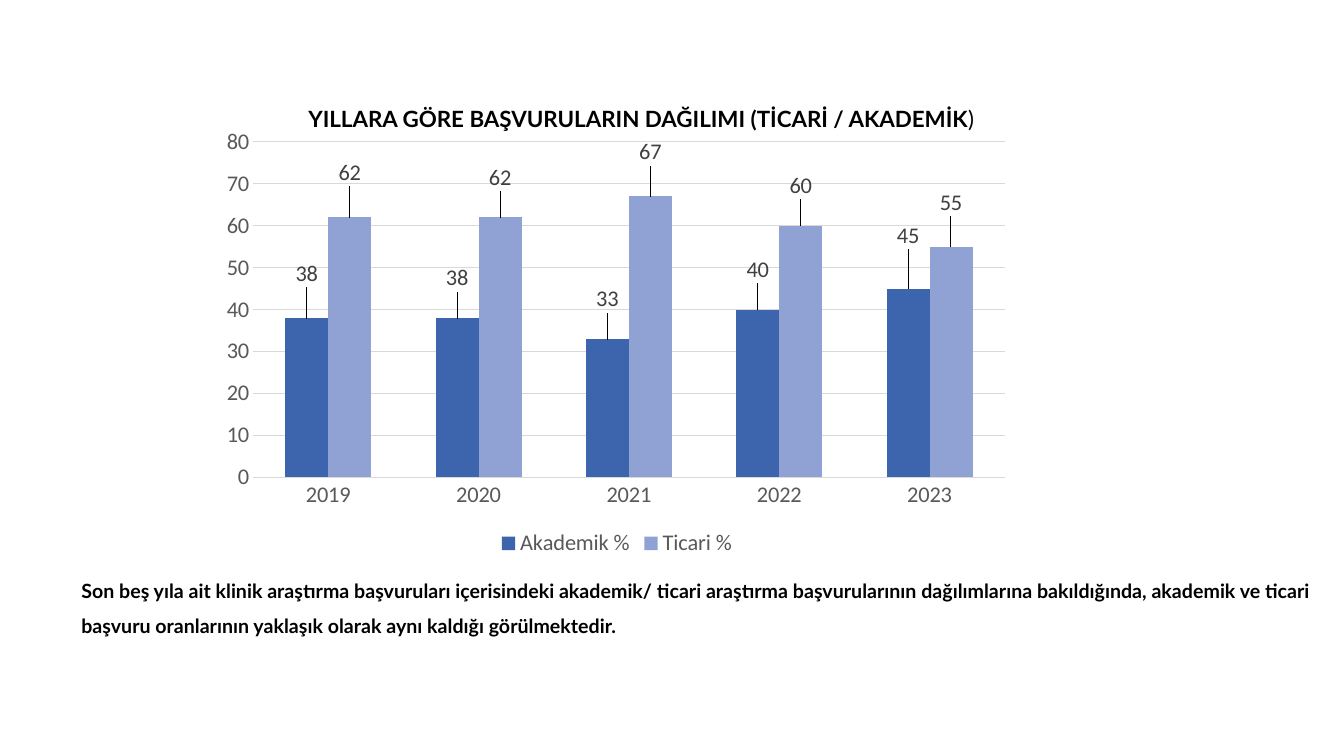
from dataclasses import dataclass

from lxml.etree import SubElement
from pptx import Presentation
from pptx.chart.data import CategoryChartData
from pptx.dml.color import RGBColor
from pptx.enum.chart import XL_CHART_TYPE, XL_LABEL_POSITION, XL_LEGEND_POSITION, XL_TICK_MARK
from pptx.enum.text import MSO_ANCHOR, MSO_AUTO_SIZE, PP_ALIGN
from pptx.oxml import parse_xml
from pptx.util import Cm, Pt

BLACK = RGBColor(0x00, 0x00, 0x00)
AXIS_GRAY = RGBColor(0x59, 0x59, 0x59)
LABEL_GRAY = RGBColor(0x40, 0x40, 0x40)
GRID_GRAY = RGBColor(0xD9, 0xD9, 0xD9)
DARK_BLUE = RGBColor(0x3C, 0x65, 0xAE)
LIGHT_BLUE = RGBColor(0x90, 0xA2, 0xD3)

CHART_NAMESPACE = "http://schemas.openxmlformats.org/drawingml/2006/chart"
YEARS = ["2019", "2020", "2021", "2022", "2023"]


@dataclass
class Share:
    name: str
    values: list[int]
    label_shifts: list[float]
    color: RGBColor


@dataclass
class TextRun:
    text: str
    bold: bool = True


SHARES = [
    Share("Akademik %", [38, 38, 33, 40, 45], [-0.06, -0.05, -0.05, -0.05, -0.08], DARK_BLUE),
    Share("Ticari %", [62, 62, 67, 60, 55], [-0.06, -0.05, -0.06, -0.05, -0.06], LIGHT_BLUE),
]
TITLE_RUNS = [
    TextRun("YILLARA GÖRE BAŞVURULARIN DAĞILIMI (TİCARİ / AKADEMİK"),
    TextRun(")", bold=False),
]
NOTE_RUNS = [
    TextRun(
        "Son beş yıla ait klinik araştırma başvuruları içerisindeki akademik/ ticari "
        "araştırma başvurularının dağılımlarına bakıldığında, akademik ve ticari "
        "başvuru oranlarının yaklaşık olarak aynı kaldığı görülmektedir."
    )
]


def write_text(shape, runs: list[TextRun], size: int) -> None:
    frame = shape.text_frame
    frame.word_wrap = True
    frame.auto_size = MSO_AUTO_SIZE.NONE
    frame.vertical_anchor = MSO_ANCHOR.TOP
    frame.margin_left = Cm(1.52)
    paragraph = frame.paragraphs[0]
    paragraph.alignment = PP_ALIGN.LEFT
    paragraph.line_spacing = 1.5
    for item in runs:
        run = paragraph.add_run()
        run.text = item.text
        run.font.name = "Lato"
        run.font.size = Pt(size)
        run.font.bold = item.bold
        run.font.color.rgb = BLACK


def style_font(font, color: RGBColor) -> None:
    font.name = "Calibri"
    font.size = Pt(16)
    font.bold = False
    font.color.rgb = color


def make_layout(**settings: str | float):
    layout = parse_xml(f'<c:layout xmlns:c="{CHART_NAMESPACE}"/>')
    manual = SubElement(layout, f"{{{CHART_NAMESPACE}}}manualLayout")
    for name, value in settings.items():
        SubElement(manual, f"{{{CHART_NAMESPACE}}}{name}", val=str(value))
    return layout


def style_axis(axis) -> None:
    axis.major_tick_mark = XL_TICK_MARK.NONE
    axis.minor_tick_mark = XL_TICK_MARK.NONE
    axis.format.line.fill.background()
    style_font(axis.tick_labels.font, AXIS_GRAY)


def style_series(series, share: Share) -> None:
    series.format.fill.solid()
    series.format.fill.fore_color.rgb = share.color
    for index, shift in enumerate(share.label_shifts):
        label = series.points[index].data_label
        style_font(label.font, LABEL_GRAY)
        label.position = XL_LABEL_POSITION.OUTSIDE_END
        label._get_or_add_dLbl().insert(1, make_layout(x=0, y=shift))
    labels = series.data_labels
    labels.show_value = True
    labels.position = XL_LABEL_POSITION.OUTSIDE_END
    style_font(labels.font, LABEL_GRAY)


def add_share_chart(slide) -> None:
    data = CategoryChartData(number_format="0")
    data.categories = YEARS
    for share in SHARES:
        data.add_series(share.name, share.values)
    chart = slide.shapes.add_chart(
        XL_CHART_TYPE.COLUMN_CLUSTERED, Cm(5.36), Cm(3.02), Cm(20.37), Cm(11.13), data
    ).chart
    style_font(chart.font, BLACK)
    chart.has_title = False
    chart.has_legend = True
    chart.legend.position = XL_LEGEND_POSITION.BOTTOM
    chart.legend.include_in_layout = False
    style_font(chart.legend.font, AXIS_GRAY)

    style_axis(chart.category_axis)
    value_axis = chart.value_axis
    style_axis(value_axis)
    value_axis.minimum_scale = 0
    value_axis.maximum_scale = 80
    value_axis.major_unit = 10
    value_axis.has_major_gridlines = True
    value_axis.major_gridlines.format.line.color.rgb = GRID_GRAY
    value_axis.major_gridlines.format.line.width = Pt(0.75)

    plot = chart.plots[0]
    plot.gap_width = 150
    plot.overlap = 0
    plot.vary_by_categories = False
    for series, share in zip(plot.series, SHARES):
        style_series(series, share)

    plot_area = chart._chartSpace.chart.plotArea
    for layout in plot_area.findall(f"{{{CHART_NAMESPACE}}}layout"):
        plot_area.remove(layout)
    plot_area.insert(0, make_layout(
        layoutTarget="inner", xMode="edge", yMode="edge", x=0.05, y=0.05, w=0.93, h=0.76
    ))


def main() -> None:
    presentation = Presentation()
    presentation.slide_width = Cm(33.87)
    presentation.slide_height = Cm(19.05)
    slide = presentation.slides.add_slide(presentation.slide_layouts[5])

    title = slide.shapes.title
    title.left, title.top, title.width, title.height = Cm(6.25), Cm(2.18), Cm(19.51), Cm(1.27)
    write_text(title, TITLE_RUNS, 16)
    note = slide.shapes.add_textbox(Cm(0.53), Cm(14.17), Cm(33.02), Cm(2.06))
    write_text(note, NOTE_RUNS, 14)
    add_share_chart(slide)

    presentation.save("out.pptx")


if __name__ == "__main__":
    main()
